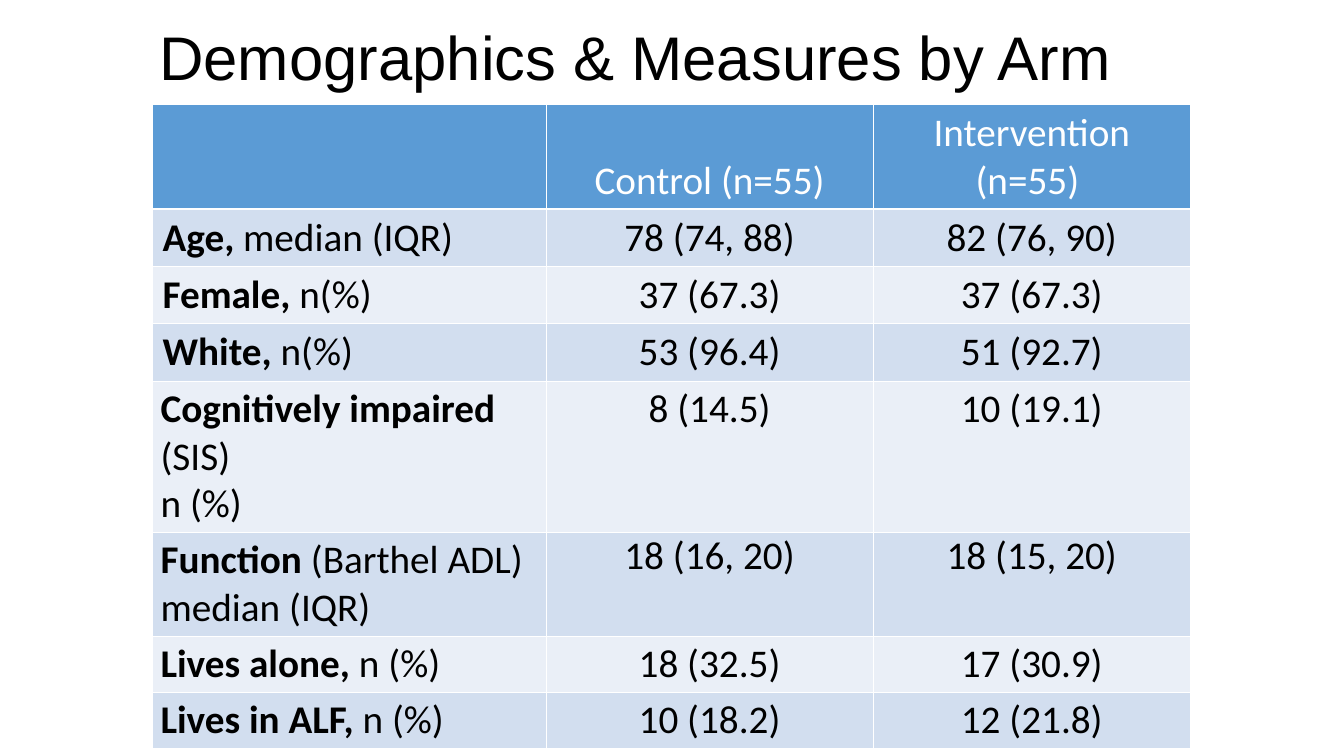
import pptx
import pptx.dml.color
import pptx.enum.text
import pptx.oxml.ns
import pptx.util
from lxml import etree

PX = 9144  # EMU in one px, at 100 px to the inch

ALIGN = pptx.enum.text.PP_ALIGN
ANCHOR = pptx.enum.text.MSO_ANCHOR

WIDE_INSET = (15, 7)
MID_INSET = (12, 6)
TIGHT_INSET = (4, 0)

COLUMN_WIDTHS = [586, 486, 473]
HEADER_HEIGHT = 155
HEADINGS = ["", "Control (n=55)", "Intervention (n=55) "]

# Height, label paragraphs as (bold, plain), control, intervention,
# label inset, value inset
MEASURES = [
    (85, [("Age,", " median (IQR)")], "78 (74, 88)", "82 (76, 90)", WIDE_INSET, WIDE_INSET),
    (85, [("Female, ", "n(%)")], "37 (67.3)", "37 (67.3)", WIDE_INSET, WIDE_INSET),
    (85, [("White,", " n(%)")], "53 (96.4)", "51 (92.7)", WIDE_INSET, WIDE_INSET),
    (223, [("Cognitively impaired ", "(SIS)"), ("", "n (%)")], "8 (14.5)", "10 (19.1)",
     MID_INSET, MID_INSET),
    (152, [("Function", " (Barthel ADL) median (IQR)")], "18 (16, 20)", "18 (15, 20)",
     MID_INSET, TIGHT_INSET),
    (82, [("Lives alone, ", "n (%)")], "18 (32.5)", "17 (30.9)", MID_INSET, MID_INSET),
    (82, [("Lives in ALF, ", "n (%)")], "10 (18.2)", "12 (21.8)", MID_INSET, MID_INSET),
]


def px(length):
    return pptx.util.Emu(length * PX)


def rgb(color):
    return pptx.dml.color.RGBColor.from_string(color)


def add_text(paragraph, text, font="Calibri", size=42, color="000000", bold=False):
    run = paragraph.add_run()
    run.text = text
    run.font.name = font
    run.font.size = pptx.util.Pt(size)
    run.font.color.rgb = rgb(color)
    run.font.bold = bold


def add_border(cell, side, color, points):
    properties = cell._tc.get_or_add_tcPr()
    line = etree.SubElement(properties, pptx.oxml.ns.qn("a:ln" + side),
                            w=str(pptx.util.Pt(points)))
    fill = etree.SubElement(line, pptx.oxml.ns.qn("a:solidFill"))
    etree.SubElement(fill, pptx.oxml.ns.qn("a:srgbClr"), val=color)


class TrialSlide:
    header_fill = "5B9BD5"
    band_fills = ("D2DEEF", "EAEFF7")
    white = "FFFFFF"

    def __init__(self, presentation):
        self.slide = presentation.slides.add_slide(presentation.slide_layouts[5])

    def title(self, text, left, top, width, height):
        title = self.slide.shapes.title
        title.left, title.top = px(left), px(top)
        title.width, title.height = px(width), px(height)
        frame = title.text_frame
        frame.auto_size = pptx.enum.text.MSO_AUTO_SIZE.NONE
        frame.vertical_anchor = ANCHOR.MIDDLE
        heading = frame.paragraphs[0]
        heading.alignment = ALIGN.LEFT
        heading.line_spacing = 0.9
        add_text(heading, text, font="Arial", size=66)

    def cell(self, cell, paragraphs, fill, inset, align=ALIGN.CENTER,
             anchor=ANCHOR.TOP, color="000000", bottom_line=1):
        """Fill a table cell; each paragraph is a (bold, plain) pair."""
        side, end = inset
        cell.margin_left = cell.margin_right = px(side)
        cell.margin_top = cell.margin_bottom = px(end)
        cell.vertical_anchor = anchor
        for edge, points in zip("LRTB", (1, 1, 1, bottom_line)):
            add_border(cell, edge, self.white, points)
        cell.fill.solid()
        cell.fill.fore_color.rgb = rgb(fill)
        frame = cell.text_frame
        for index, (strong, plain) in enumerate(paragraphs):
            paragraph = frame.add_paragraph() if index else frame.paragraphs[0]
            paragraph.alignment = align
            if strong:
                add_text(paragraph, strong, color=color, bold=True)
            if plain:
                add_text(paragraph, plain, color=color)

    def table(self, left, top):
        heights = [HEADER_HEIGHT] + [measure[0] for measure in MEASURES]
        table = self.slide.shapes.add_table(
            len(heights), len(COLUMN_WIDTHS), px(left), px(top),
            px(sum(COLUMN_WIDTHS)), px(sum(heights))).table
        table.first_row = table.horz_banding = False
        for column, width in zip(table.columns, COLUMN_WIDTHS):
            column.width = px(width)
        for row, height in zip(table.rows, heights):
            row.height = px(height)

        for column, heading in enumerate(HEADINGS):
            self.cell(table.cell(0, column), [("", heading)], self.header_fill, WIDE_INSET,
                      anchor=ANCHOR.BOTTOM, color=self.white, bottom_line=3)
        for row, measure in enumerate(MEASURES, start=1):
            _, label, control, intervention, label_inset, value_inset = measure
            fill = self.band_fills[(row - 1) % 2]
            self.cell(table.cell(row, 0), label, fill, label_inset, align=ALIGN.LEFT)
            for column, value in enumerate((control, intervention), start=1):
                self.cell(table.cell(row, column), [("", value)], fill, value_inset)


def main():
    presentation = pptx.Presentation()
    presentation.slide_width, presentation.slide_height = px(2000), px(1125)
    demographics = TrialSlide(presentation)
    demographics.title("Demographics & Measures by Arm", 227, 25, 1725, 130)
    demographics.table(227, 155)
    presentation.save("out.pptx")


if __name__ == "__main__":
    main()
